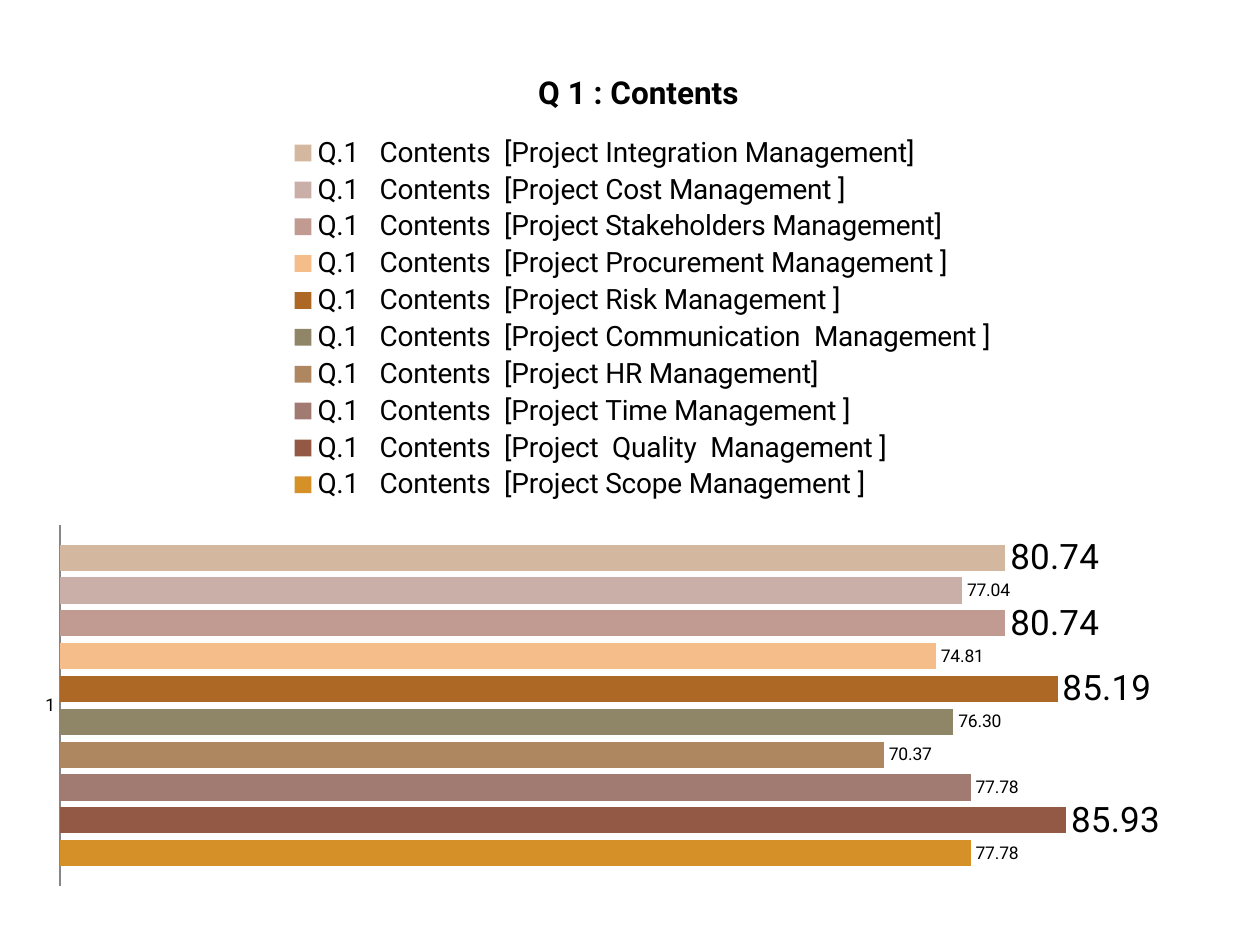
from lxml import etree
from pptx import Presentation
from pptx.chart.data import CategoryChartData
from pptx.dml.color import RGBColor
from pptx.enum.chart import (XL_CHART_TYPE, XL_LABEL_POSITION,
                             XL_LEGEND_POSITION, XL_TICK_LABEL_POSITION,
                             XL_TICK_MARK)
from pptx.oxml.ns import qn
from pptx.util import Emu, Pt

BAR = XL_CHART_TYPE.BAR_CLUSTERED
OUTER = XL_LABEL_POSITION.OUTSIDE_END
TOP = XL_LEGEND_POSITION.TOP
NONE = XL_TICK_MARK.NONE
NO_LABEL = XL_TICK_LABEL_POSITION.NONE
FONT = "Roboto"
FORMAT = "0.00"
FRAME = (21, 42, 1235, 861)
LEGEND = (283, 132, 720, 374)
PLOT = (60, 525, 1171, 361)
HIGH = 80
AREAS = [
    ("Project Scope Management ", 77.78, "D59128"),
    ("Project  Quality  Management ", 85.93, "935945"),
    ("Project Time Management ", 77.78, "A17B72"),
    ("Project HR Management", 70.37, "AE8761"),
    ("Project Communication  Management ", 76.3, "8F8567"),
    ("Project Risk Management ", 85.19, "AC6824"),
    ("Project Procurement Management ", 74.81, "F4BD8A"),
    ("Project Stakeholders Management", 80.74, "C19B92"),
    ("Project Cost Management ", 77.04, "CAAFA9"),
    ("Project Integration Management", 80.74, "D4B79F"),
]


def px(count):
    """Turn pixels into EMU."""
    return Emu(round(count * 914400 / 126))


def color(code):
    """Turn a hex string into a colour."""
    return RGBColor.from_string(code)


def style(font, size, bold=False):
    """Set the face, size and colour of a font."""
    font.name = FONT
    font.size = Pt(size)
    font.bold = bold
    font.color.rgb = color("000000")


def place(part, after, box, inner=False):
    """Lay out a chart part at a pixel box, after its given child."""
    for old in part.findall(qn("c:layout")):
        part.remove(old)
    layout = etree.Element(qn("c:layout"))
    manual = etree.SubElement(layout, qn("c:manualLayout"))
    left, top, width, height = box
    parts = [("xMode", "edge"), ("yMode", "edge"),
             ("x", round((left - FRAME[0]) / FRAME[2], 4)),
             ("y", round((top - FRAME[1]) / FRAME[3], 4)),
             ("w", round(width / FRAME[2], 4)),
             ("h", round(height / FRAME[3], 4))]
    if inner:
        parts.insert(0, ("layoutTarget", "inner"))
    for name, value in parts:
        etree.SubElement(manual, qn(f"c:{name}")).set("val", str(value))
    part.insert(after, layout)


def add_chart(slide):
    """Add the bar chart with one series for each area."""
    data = CategoryChartData(number_format=FORMAT)
    data.categories = ["1"]
    for name, value, _ in AREAS:
        data.add_series(f"Q.1   Contents  [{name}]", [value])
    chart = slide.shapes.add_chart(BAR, *map(px, FRAME), data).chart
    style(chart.font, 10)
    return chart


def set_title(chart):
    """Write the chart title."""
    chart.has_title = True
    para = chart.chart_title.text_frame.paragraphs[0]
    para.text = "Q 1 : Contents"
    style(para.font, 18, True)
    chart.chart_title.include_in_layout = False


def set_legend(chart):
    """Show the legend in one column above the bars."""
    chart.has_legend = True
    legend = chart.legend
    legend.position = TOP
    legend.include_in_layout = False
    style(legend.font, 16)
    place(chart.element.find(".//" + qn("c:legend")), 1, LEGEND)


def set_axes(chart):
    """Keep a plain category axis and hide the value axis."""
    cat, val = chart.category_axis, chart.value_axis
    cat.major_tick_mark = cat.minor_tick_mark = NONE
    cat.has_major_gridlines = val.has_major_gridlines = False
    cat.format.line.color.rgb = color("868686")
    val.minimum_scale, val.maximum_scale = 0, 100
    val.tick_labels.number_format = FORMAT
    val.tick_labels.number_format_is_linked = False
    val.tick_label_position = NO_LABEL
    val.visible = False


def set_bars(chart):
    """Colour the bars and enlarge the labels of high values."""
    plot = chart.plots[0]
    plot.gap_width, plot.overlap = 150, -25
    plot.vary_by_categories = False
    for bar, (_, value, code) in zip(plot.series, AREAS):
        bar.format.fill.solid()
        bar.format.fill.fore_color.rgb = color(code)
        labels = bar.data_labels
        labels.show_value = True
        labels.number_format = FORMAT
        labels.number_format_is_linked = False
        labels.position = OUTER
        style(labels.font, 20 if value > HIGH else 10)
    place(chart.element.find(".//" + qn("c:plotArea")), 0, PLOT, True)


def main():
    """Build the slide and save it."""
    deck = Presentation()
    deck.slide_width, deck.slide_height = px(1260), px(945)
    slide = deck.slides.add_slide(deck.slide_layouts[6])
    chart = add_chart(slide)
    set_title(chart)
    set_legend(chart)
    set_axes(chart)
    set_bars(chart)
    deck.save("out.pptx")


if __name__ == "__main__":
    main()
